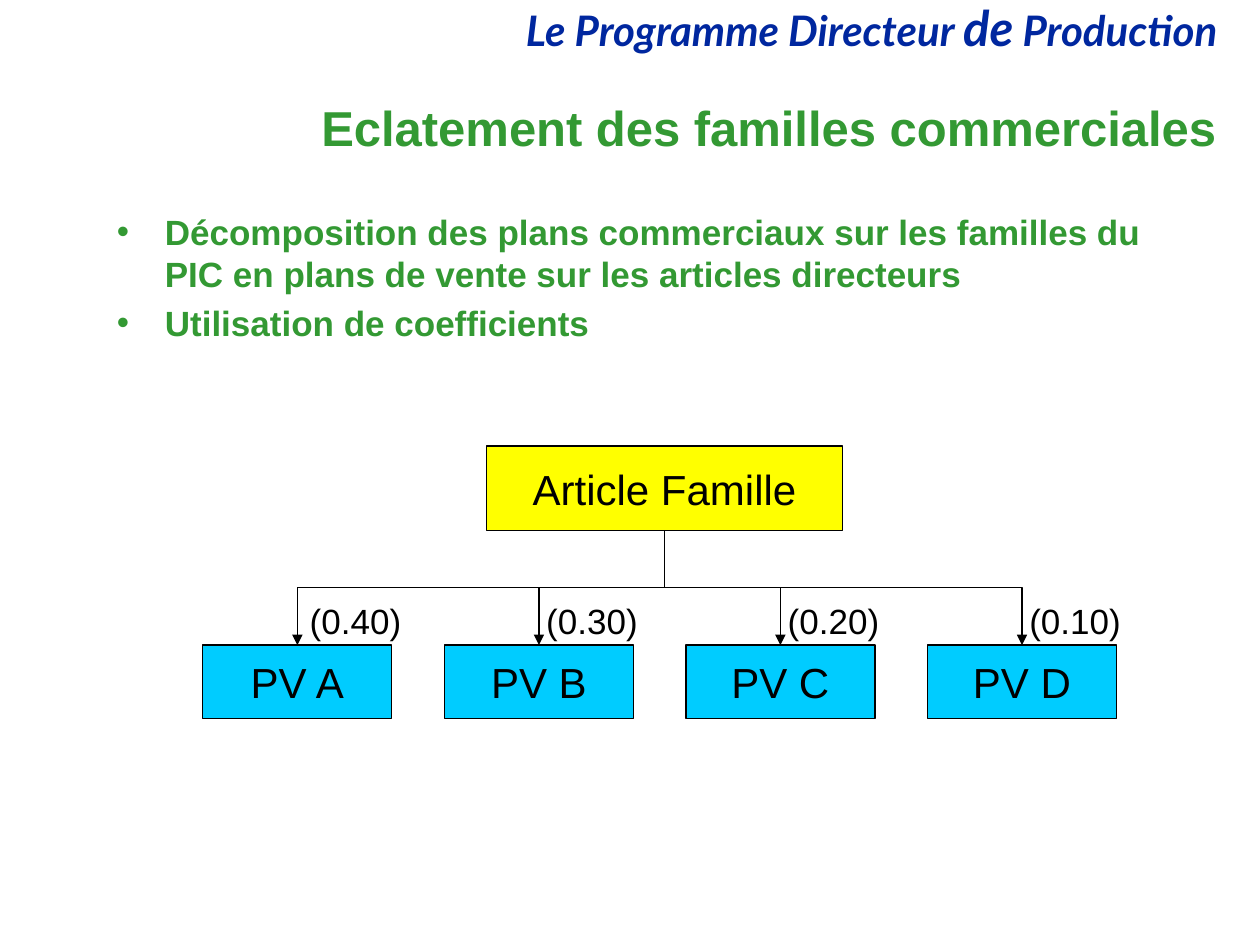
from typing import NamedTuple

from lxml.etree import SubElement
from pptx import Presentation
from pptx.dml.color import RGBColor
from pptx.enum.shapes import MSO_CONNECTOR as Link, MSO_SHAPE as Preset
from pptx.enum.text import MSO_ANCHOR as Anchor, MSO_AUTO_SIZE as AutoSize, PP_ALIGN as Align
from pptx.oxml.ns import qn
from pptx.util import Inches, Pt

COLORS = {
    "navy": "00279F",
    "green": "339933",
    "yellow": "FFFF00",
    "cyan": "00CCFF",
    "black": "000000",
}
FIRST_COLUMN, COLUMN_STEP = 1.61, 1.917
ARTICLE_TOP, LABEL_TOP = 5.12, 4.71


class Box(NamedTuple):
    left: float
    top: float
    width: float
    height: float

    def emu(self):
        return [Inches(length) for length in self]


class Article(NamedTuple):
    name: str
    share: str
    label_shift: float


ARTICLES = [
    Article("PV A", "(0.40)", 0.75),
    Article("PV B", "(0.30)", 0.71),
    Article("PV C", "(0.20)", 0.71),
    Article("PV D", "(0.10)", 0.71),
]
BULLETS = [
    "Décomposition des plans commerciaux sur les familles du "
    "PIC en plans de vente sur les articles directeurs",
    "Utilisation de coefficients",
]


def rgb(color: str) -> RGBColor:
    return RGBColor.from_string(COLORS[color])


def style(font, size: float, color: str, bold: bool = False, name: str = "Arial") -> None:
    font.name, font.size, font.bold = name, Pt(size), bold
    font.color.rgb = rgb(color)


def add_text(slide, box: Box, text: str, wrap: bool = True):
    frame = slide.shapes.add_textbox(*box.emu()).text_frame
    frame.word_wrap = wrap
    frame.text = text
    return frame


def add_header(slide) -> None:
    frame = add_text(slide, Box(1.68, -0.02, 8.08, 0.52), "")
    frame.auto_size = AutoSize.SHAPE_TO_FIT_TEXT
    header = frame.paragraphs[0]
    header.alignment, header.line_spacing = Align.RIGHT, 0.9
    for words, size in (("Le Programme Directeur ", 24), ("de", 28), (" Production", 24)):
        run = header.add_run()
        run.text = words
        style(run.font, size, "navy", bold=True, name="Lato")
        run.font.italic = True


def add_title(slide) -> None:
    frame = add_text(slide, Box(1.42, 0.67, 8.33, 0.67), "Eclatement des familles commerciales")
    frame.vertical_anchor = Anchor.MIDDLE
    title = frame.paragraphs[0]
    title.alignment = Align.RIGHT
    style(title.runs[0].font, 28, "green", bold=True)


def add_bullets(slide) -> None:
    frame = add_text(slide, Box(0.83, 1.62, 8.35, 1.5), "\n".join(BULLETS))
    for index, point in enumerate(frame.paragraphs):
        properties = point._p.get_or_add_pPr()
        properties.set("marL", str(Inches(0.38)))
        properties.set("indent", str(-Inches(0.38)))
        if index:
            point.space_before = Pt(4)
        SubElement(properties, qn("a:buFont"), typeface="Arial")
        SubElement(properties, qn("a:buChar"), char="•")
        style(point.runs[0].font, 20, "green", bold=True)


def add_block(slide, box: Box, text: str, fill: str):
    block = slide.shapes.add_shape(Preset.RECTANGLE, *box.emu())
    block.shadow.inherit = False
    block.fill.solid()
    block.fill.fore_color.rgb = rgb(fill)
    block.line.color.rgb = rgb("black")
    block.line.width = Pt(0.75)
    frame = block.text_frame
    frame.word_wrap, frame.vertical_anchor = False, Anchor.MIDDLE
    frame.text = text
    frame.paragraphs[0].alignment = Align.CENTER
    style(frame.paragraphs[0].runs[0].font, 24, "black")
    return block


def add_branch(slide, parent, child) -> None:
    """Draw an elbow arrow that leaves the parent downwards and enters the child's top."""
    start_x, start_y = parent.left + parent.width // 2, parent.top + parent.height
    end_x, end_y = child.left + child.width // 2, child.top
    branch = slide.shapes.add_connector(Link.ELBOW, start_x, start_y, end_x, end_y)
    branch.begin_connect(parent, 2)
    branch.end_connect(child, 0)

    # A vertical elbow is a horizontal one turned by a quarter about its centre.
    drop, spread = end_y - start_y, abs(end_x - start_x)
    branch.left = (start_x + end_x - drop) // 2
    branch.top = (start_y + end_y - spread) // 2
    branch.width, branch.height = drop, spread
    to_right = end_x > start_x
    transform = branch._element.spPr.find(qn("a:xfrm"))
    transform.set("rot", str((270 if to_right else 90) * 60000))
    transform.set("flipH", "1" if to_right else "0")
    transform.set("flipV", "0")

    branch.line.color.rgb = rgb("black")
    branch.line.width = Pt(0.75)
    SubElement(branch.line._get_or_add_ln(), qn("a:tailEnd"), type="triangle")
    SubElement(branch._element.spPr, qn("a:effectLst"))


def add_share(slide, left: float, share: str) -> None:
    frame = add_text(slide, Box(left, LABEL_TOP, 0.93, 0.43), share, wrap=False)
    frame.auto_size = AutoSize.SHAPE_TO_FIT_TEXT
    style(frame.paragraphs[0].runs[0].font, 20, "black")


def main() -> None:
    deck = Presentation()
    deck.slide_width, deck.slide_height = Inches(10), Inches(7.5)
    slide = deck.slides.add_slide(deck.slide_layouts[6])
    add_header(slide)
    add_title(slide)
    add_bullets(slide)

    family = add_block(slide, Box(3.86, 3.54, 2.83, 0.67), "Article Famille", "yellow")
    for column, article in enumerate(ARTICLES):
        left = FIRST_COLUMN + column * COLUMN_STEP
        block = add_block(slide, Box(left, ARTICLE_TOP, 1.5, 0.58), article.name, "cyan")
        add_branch(slide, family, block)
        add_share(slide, left + article.label_shift, article.share)
    deck.save("out.pptx")


if __name__ == "__main__":
    main()
